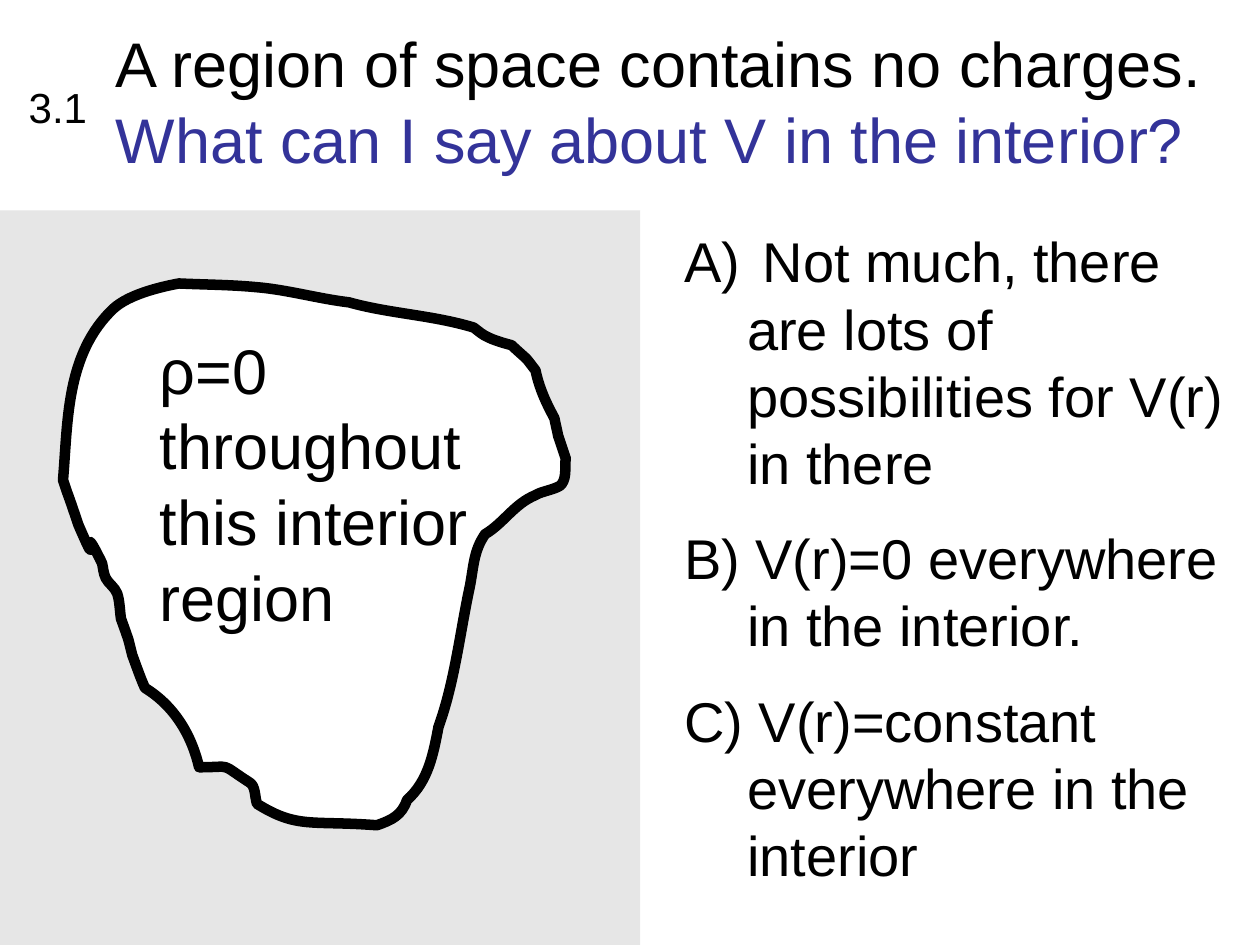
from lxml.etree import SubElement
from pptx import Presentation
from pptx.dml.color import RGBColor
from pptx.enum.shapes import MSO_SHAPE
from pptx.enum.text import MSO_ANCHOR, MSO_AUTO_SIZE, PP_ALIGN
from pptx.oxml.ns import qn
from pptx.util import Inches, Pt

TITLE = [("A region of space contains no charges. ", "000000"),
         ("What can I say about V in the interior?", "333399")]
NUMBER = "3.1"
ANSWERS = [" Not much, there are lots of possibilities for V(r) in there",
           "B) V(r)=0 everywhere in the interior.",
           "C) V(r)=constant \veverywhere in the interior"]
REGION_LABEL = ["ρ=0", "throughout", "this interior", "region"]

# Outline of the region in hundredths of an inch: a start point,
# then Bézier curves (two control points and an end point)
REGION_START = (158, 609)
REGION_CURVES = [
    (152, 583, 138, 560, 115, 546), (111, 537, 108, 528, 105, 520),
    (104, 516, 103, 512, 102, 508), (100, 502, 96, 491, 96, 491),
    (95, 484, 95, 477, 93, 471), (91, 466, 86, 463, 84, 459),
    (82, 455, 82, 451, 81, 447), (59, 402, 84, 467, 62, 416),
    (59, 407, 56, 398, 53, 390), (52, 387, 50, 381, 50, 381),
    (54, 335, 52, 281, 90, 245), (102, 234, 126, 228, 142, 225),
    (163, 226, 183, 226, 204, 228), (228, 230, 252, 237, 277, 240),
    (309, 249, 343, 250, 376, 260), (380, 263, 383, 266, 388, 268),
    (394, 271, 406, 274, 406, 274), (421, 288, 415, 281, 425, 294),
    (428, 308, 433, 319, 440, 332), (441, 337, 442, 341, 443, 346),
    (445, 352, 449, 364, 449, 364), (448, 370, 450, 378, 446, 384),
    (444, 388, 429, 390, 425, 393), (408, 400, 400, 415, 385, 424),
    (376, 437, 376, 449, 373, 465), (365, 502, 361, 541, 348, 577),
    (344, 598, 340, 620, 323, 635), (319, 647, 311, 651, 299, 655),
    (247, 651, 236, 658, 204, 638), (202, 632, 203, 624, 198, 621),
    (173, 605, 186, 609, 158, 609),
]


def color(hex_value):
    return RGBColor.from_string(hex_value)


def place(shape, left, top, width, height):
    shape.left, shape.top = Inches(left), Inches(top)
    shape.width, shape.height = Inches(width), Inches(height)


def style(para, size, hex_value="000000"):
    para.font.name = "Arial"
    para.font.size = Pt(size)
    para.font.color.rgb = color(hex_value)
    para.alignment = PP_ALIGN.LEFT


def fill_lines(frame, lines, size, before=0):
    """Write one styled paragraph for each line and return the paragraphs."""
    frame.auto_size = MSO_AUTO_SIZE.NONE
    for index, line in enumerate(lines):
        para = frame.paragraphs[0] if index == 0 else frame.add_paragraph()
        para.text = line
        para.space_before = Pt(before)
        style(para, size)
    return frame.paragraphs


def add_text(slide, lines, size, area, wrap, before=0):
    box = slide.shapes.add_textbox(*map(Inches, area))
    fill_lines(box.text_frame, lines, size, before)
    box.text_frame.word_wrap = wrap


def add_title(slide):
    title = slide.shapes.title
    place(title, 0.82, 0.17, 9, 1.25)
    frame = title.text_frame
    frame.auto_size = MSO_AUTO_SIZE.NONE
    frame.vertical_anchor = MSO_ANCHOR.MIDDLE
    para = frame.paragraphs[0]
    style(para, 36)
    for text, hex_value in TITLE:
        span = para.add_run()
        span.text = text
        span.font.color.rgb = color(hex_value)


def add_answers(slide):
    body = slide.placeholders[1]
    place(body, 5.33, 1.75, 4.5, 5.43)
    for index, para in enumerate(fill_lines(body.text_frame, ANSWERS, 32, 16)):
        properties = para._p.get_or_add_pPr()
        properties.set("marL", str(Inches(0.5)))
        properties.set("indent", str(Inches(-0.5)))
        bullet = "a:buAutoNum" if index == 0 else "a:buNone"
        # Bullets precede the default run properties in the schema
        element = SubElement(properties, qn(bullet))
        properties.find(qn("a:defRPr")).addprevious(element)
        if index == 0:
            element.set("type", "alphaUcParenR")


def add_outside(slide):
    outside = slide.shapes.add_shape(
        MSO_SHAPE.RECTANGLE, *map(Inches, (0, 1.67, 5.08, 5.83)))
    outside.shadow.inherit = False
    outside.line.fill.background()
    outside.fill.solid()
    outside.fill.fore_color.rgb = color("C0C0C0")
    fill_color = outside._element.spPr.find(".//" + qn("a:srgbClr"))
    SubElement(fill_color, qn("a:alpha")).set("val", "39000")


def bend_segments(shape, curves, left, top):
    """Turn the straight segments of a freeform into Bézier curves."""
    segments = list(shape._element.spPr.iter(qn("a:lnTo")))
    for segment, curve in zip(segments, curves):
        bend = segment.makeelement(qn("a:cubicBezTo"))
        for x, y in zip(curve[::2], curve[1::2]):
            point = SubElement(bend, qn("a:pt"))
            point.set("x", str(x - left))
            point.set("y", str(y - top))
        segment.getparent().replace(segment, bend)


def add_region(slide):
    corners = [curve[4:] for curve in REGION_CURVES]
    builder = slide.shapes.build_freeform(*REGION_START, scale=Inches(0.01))
    builder.add_line_segments(corners, close=True)
    region = builder.convert_to_shape()
    bend_segments(region, REGION_CURVES, *map(min, zip(*corners)))
    region.shadow.inherit = False
    region.fill.solid()
    region.fill.fore_color.rgb = color("FFFFFF")
    region.line.color.rgb = color("000000")
    region.line.width = Pt(6)
    SubElement(region.line._get_or_add_ln(), qn("a:round"))


def main():
    deck = Presentation()
    deck.slide_width, deck.slide_height = Inches(10), Inches(7.5)
    slide = deck.slides.add_slide(deck.slide_layouts[1])
    add_outside(slide)
    add_title(slide)
    add_text(slide, [NUMBER], 24, (0.13, 0.6, 0.87, 0.5), True, before=12)
    add_answers(slide)
    add_region(slide)
    add_text(slide, REGION_LABEL, 36, (1.17, 2.58, 2.65, 2.5), False)
    deck.save("out.pptx")


if __name__ == "__main__":
    main()
